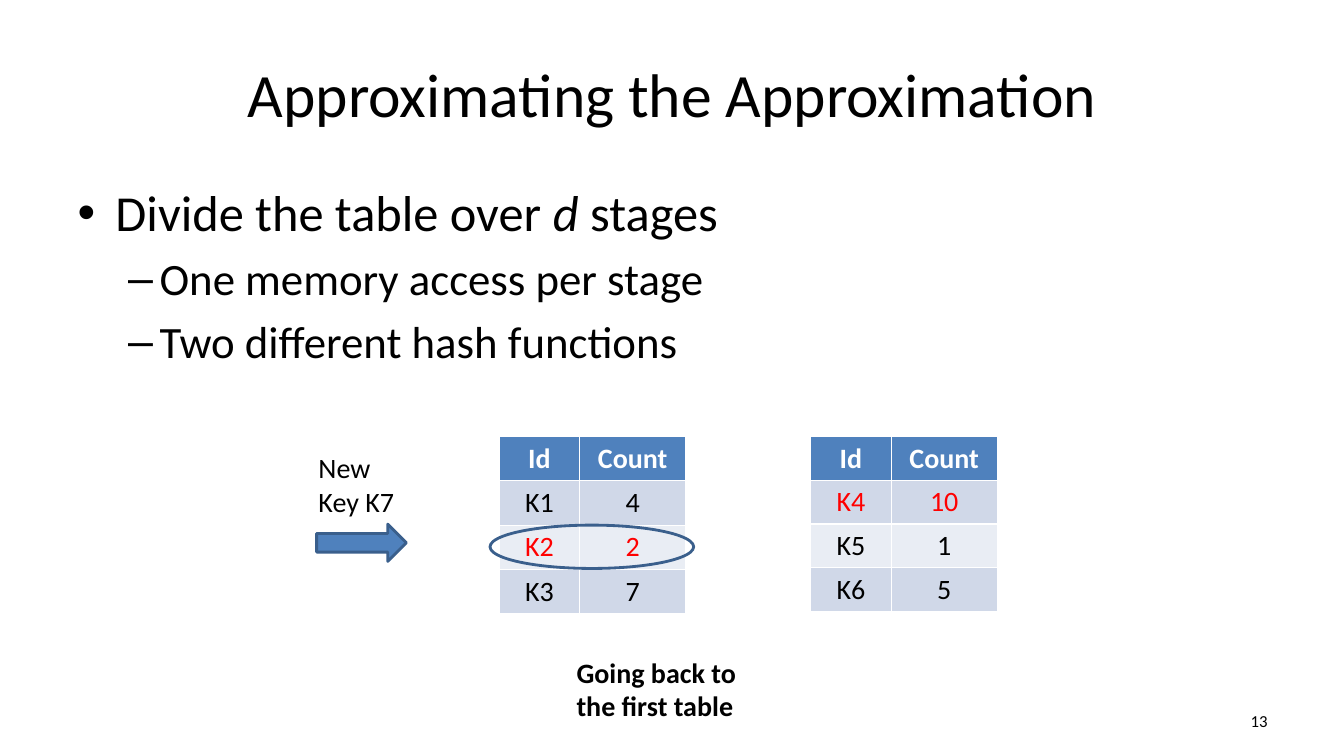
from pptx import Presentation
from pptx.dml.color import RGBColor
from pptx.enum.shapes import MSO_SHAPE
from pptx.enum.text import MSO_ANCHOR, PP_ALIGN
from pptx.util import Inches, Pt

FONT = "Calibri"
COLORS = {
    "text": "000000",
    "header_text": "FFFFFF",
    "highlight": "FF0000",
    "blue": "4F81BD",
    "outline": "3A5F8C",
    "band_dark": "D0D8E8",
    "band_light": "E9EDF4",
}


def rgb(name):
    return RGBColor.from_string(COLORS[name])


def place(sp, x, y, w, h):
    sp.left, sp.top = Inches(x), Inches(y)
    sp.width, sp.height = Inches(w), Inches(h)


def add_run(p, text, size, color="text", bold=False, italic=False):
    r = p.add_run()
    r.text = text
    r.font.name = FONT
    r.font.size = Pt(size)
    r.font.bold = bold
    r.font.italic = italic
    r.font.color.rgb = rgb(color)


def add_title(s, text):
    place(s.shapes.title, 0.67, 0.3, 12, 1.25)
    add_run(s.shapes.title.text_frame.paragraphs[0], text, 44)


def add_bullets(s, heading, items):
    sp = s.placeholders[1]
    place(sp, 0.67, 1.75, 12, 4.95)
    tf = sp.text_frame
    for text, italic in heading:
        add_run(tf.paragraphs[0], text, 36, italic=italic)
    for item in items:
        p = tf.add_paragraph()
        p.level = 1
        add_run(p, item, 32)


def add_label(s, text, x, y, w, h, size=20, bold=False,
              align=PP_ALIGN.LEFT, anchor=MSO_ANCHOR.TOP):
    sp = s.shapes.add_textbox(Inches(x), Inches(y), Inches(w), Inches(h))
    tf = sp.text_frame
    tf.word_wrap = True
    tf.vertical_anchor = anchor
    p = tf.paragraphs[0]
    p.alignment = align
    add_run(p, text, size, bold=bold)


def add_outlined_shape(s, kind, x, y, w, h, fill=None):
    sp = s.shapes.add_shape(kind, Inches(x), Inches(y), Inches(w), Inches(h))
    sp.shadow.inherit = False
    if fill:
        sp.fill.solid()
        sp.fill.fore_color.rgb = rgb(fill)
    else:
        sp.fill.background()
    sp.line.color.rgb = rgb("outline")
    sp.line.width = Pt(2)


def add_stage_table(s, x, counts, highlighted, row_height):
    rows = [("Id", "Count"), *counts]
    frame = s.shapes.add_table(len(rows), 2, Inches(x), Inches(4.33),
                               Inches(1.85), Inches(row_height * len(rows)))
    table = frame.table
    for column, width in zip(table.columns, (0.8, 1.05)):
        column.width = Inches(width)
    for i, row in enumerate(rows):
        if i == 0:
            fill, color = "blue", "header_text"
        else:
            fill = "band_dark" if i % 2 else "band_light"
            color = "highlight" if row[0] == highlighted else "text"
        for j, text in enumerate(row):
            cell = table.cell(i, j)
            cell.fill.solid()
            cell.fill.fore_color.rgb = rgb(fill)
            p = cell.text_frame.paragraphs[0]
            p.alignment = PP_ALIGN.CENTER
            add_run(p, text, 20, color, bold=i == 0)


def main():
    prs = Presentation()
    prs.slide_width, prs.slide_height = Inches(13.33), Inches(7.5)
    s = prs.slides.add_slide(prs.slide_layouts[1])

    add_title(s, "Approximating the Approximation")
    add_bullets(s,
                [("Divide the table over ", False), ("d", True), (" stages", False)],
                ["One memory access per stage", "Two different hash functions"])
    add_label(s, "13", 9.56, 6.95, 3.11, 0.4, size=12,
              align=PP_ALIGN.RIGHT, anchor=MSO_ANCHOR.MIDDLE)

    add_stage_table(s, 4.95, [("K1", "4"), ("K2", "2"), ("K3", "7")], "K2", 0.44)
    add_stage_table(s, 8.04, [("K4", "10"), ("K5", "1"), ("K6", "5")], "K4", 0.43)

    add_label(s, "New Key K7", 3.06, 4.42, 1.01, 0.77)
    add_outlined_shape(s, MSO_SHAPE.RIGHT_ARROW, 3.14, 5.2, 0.89, 0.37, "blue")
    add_outlined_shape(s, MSO_SHAPE.OVAL, 4.86, 5.21, 2.02, 0.43)
    add_label(s, "Going back to the first table", 5.62, 6.45, 1.9, 0.77, bold=True)

    prs.save("out.pptx")


if __name__ == "__main__":
    main()
